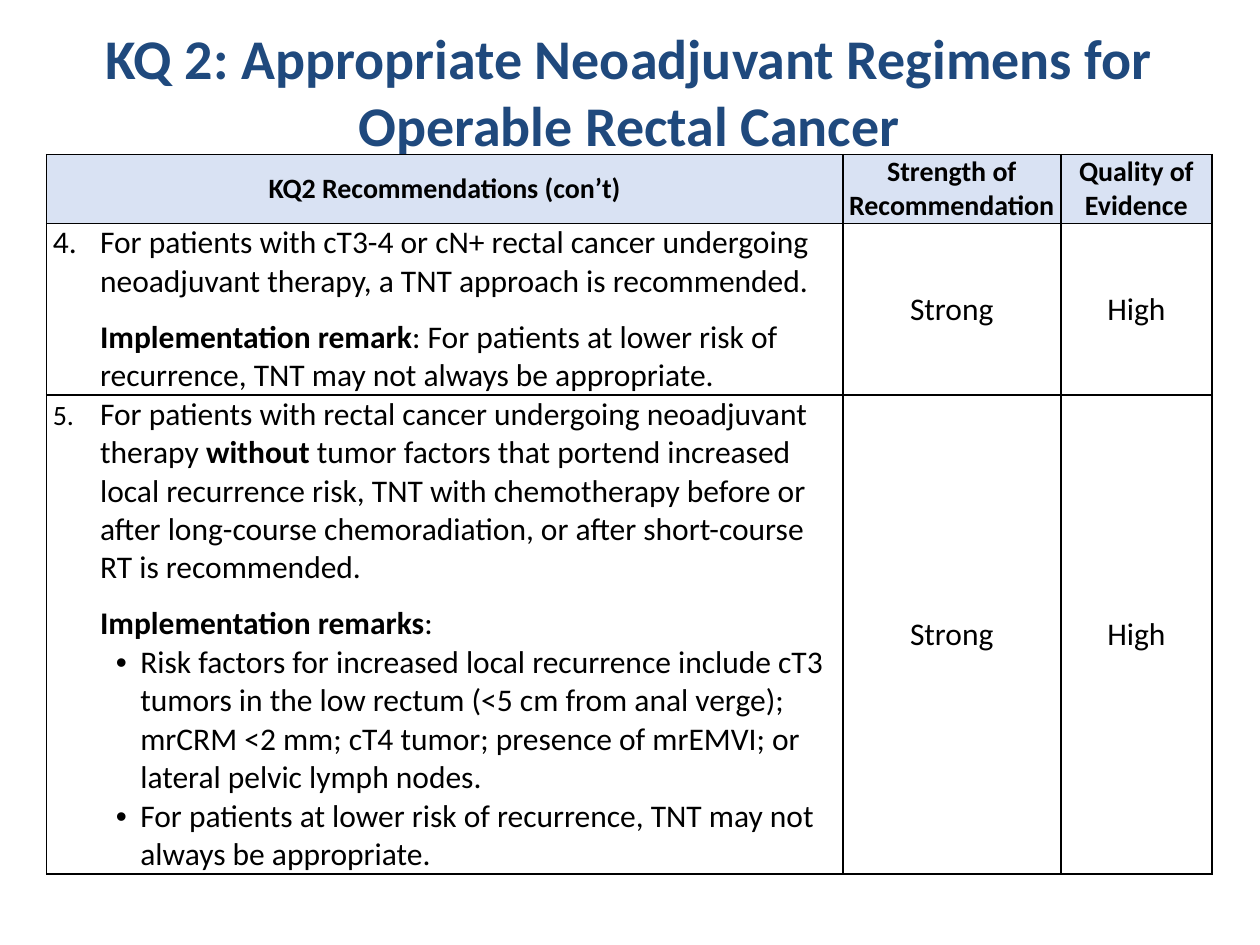
from lxml.etree import SubElement
from pptx import Presentation
from pptx.dml.color import RGBColor
from pptx.enum.text import MSO_ANCHOR, PP_ALIGN
from pptx.oxml.ns import qn
from pptx.util import Pt

COLORS = {"title": "1F497D", "text": "000000", "header": "D9E2F3", "border": "000000"}
LEFT, WIDTH = 26.6, 666
COL_WIDTHS = [455, 124.6, 86.4]
ROW_HEIGHTS = [39.4, 98, 273.6]


class Deck:
    font = "Calibri"

    def __init__(self):
        self.prs = Presentation()
        self.prs.slide_width, self.prs.slide_height = Pt(720), Pt(540)
        self.s = self.prs.slides.add_slide(self.prs.slide_layouts[5])

    def run(self, p, text, size, bold=False, color="text"):
        r = p.add_run()
        r.text = text
        r.font.name, r.font.size, r.font.bold = self.font, Pt(size), bold
        r.font.color.rgb = RGBColor.from_string(COLORS[color])

    def title(self, text, top, height):
        sp = self.s.shapes.title
        sp.left, sp.top, sp.width, sp.height = Pt(LEFT), Pt(top), Pt(WIDTH), Pt(height)
        tf = sp.text_frame
        tf.word_wrap, tf.vertical_anchor = True, MSO_ANCHOR.MIDDLE
        p = tf.paragraphs[0]
        p.alignment = PP_ALIGN.CENTER
        self.run(p, text, 32, True, "title")

    def table(self, top):
        shape = self.s.shapes.add_table(len(ROW_HEIGHTS), len(COL_WIDTHS), Pt(LEFT),
                                        Pt(top), Pt(WIDTH), Pt(sum(ROW_HEIGHTS)))
        table = shape.table
        table.first_row = table.horz_banding = False
        for col, width in zip(table.columns, COL_WIDTHS):
            col.width = Pt(width)
        for row, height in zip(table.rows, ROW_HEIGHTS):
            row.height = Pt(height)
        return table

    def cell(self, cell, header=False):
        cell.margin_left = cell.margin_right = Pt(3.6)
        cell.margin_top = cell.margin_bottom = 0
        tcPr = cell._tc.get_or_add_tcPr()
        for side in ("a:lnL", "a:lnR", "a:lnT", "a:lnB"):
            ln = SubElement(tcPr, qn(side), w=str(Pt(1)))
            SubElement(SubElement(ln, qn("a:solidFill")), qn("a:srgbClr"), val=COLORS["border"])
        if header:
            cell.fill.solid()
            cell.fill.fore_color.rgb = RGBColor.from_string(COLORS["header"])
        else:
            cell.fill.background()

    def label(self, cell, text, header=False):
        self.cell(cell, header)
        cell.vertical_anchor = MSO_ANCHOR.MIDDLE
        p = cell.text_frame.paragraphs[0]
        p.alignment = PP_ALIGN.CENTER
        self.run(p, text, 16 if header else 18, header)

    def recommendation(self, cell, paragraphs):
        self.cell(cell)
        tf = cell.text_frame
        for i, (kind, runs) in enumerate(paragraphs):
            p = tf.add_paragraph() if i else tf.paragraphs[0]
            pPr = p._p.get_or_add_pPr()
            margin, hang = (50, 14) if kind == "bullet" else (27, 0 if kind == "remark" else 27)
            pPr.set("marL", str(Pt(margin)))
            pPr.set("indent", str(-Pt(hang)))
            if kind == "remark":
                p.space_before = Pt(10)
                SubElement(pPr, qn("a:buNone"))
            elif kind == "bullet":
                SubElement(pPr, qn("a:buFont"), typeface="Arial")
                SubElement(pPr, qn("a:buChar"), char="•")
            else:
                number, percent = kind
                SubElement(pPr, qn("a:buSzPct"), val=str(percent * 1000))
                SubElement(pPr, qn("a:buFont"), typeface=self.font)
                SubElement(pPr, qn("a:buAutoNum"), type="arabicPeriod", startAt=str(number))
            for text, bold in runs:
                self.run(p, text, 18, bold)


HEADERS = ["KQ2 Recommendations (con’t)", "Strength of Recommendation", "Quality of Evidence"]
# Each row: recommendation paragraphs (kind or (number, number size %), runs), strength, quality
ROWS = [
    ([((4, 100), [("For patients with cT3-4 or cN+ rectal cancer undergoing neoadjuvant "
                   "therapy, a TNT approach is recommended.", False)]),
      ("remark", [("Implementation remark", True),
                  (": For patients at lower risk of recurrence, TNT may not always be "
                   "appropriate.", False)])],
     "Strong", "High"),
    ([((5, 89), [("For patients with rectal cancer undergoing neoadjuvant therapy ", False),
                 ("without", True),
                 (" tumor factors that portend increased local recurrence risk, TNT with "
                  "chemotherapy before or after long-course chemoradiation, or after "
                  "short-course RT is recommended.", False)]),
      ("remark", [("Implementation remarks", True), (":", False)]),
      ("bullet", [("Risk factors for increased local recurrence include cT3 tumors in the low "
                   "rectum (<5 cm from anal verge); mrCRM <2 mm; cT4 tumor; presence of "
                   "mrEMVI; or lateral pelvic lymph nodes.", False)]),
      ("bullet", [("For patients at lower risk of recurrence, TNT may not always be "
                   "appropriate.", False)])],
     "Strong", "High"),
]


def main():
    deck = Deck()
    # Title
    deck.title("KQ 2: Appropriate Neoadjuvant Regimens for Operable Rectal Cancer", 9.4, 85)
    # Table header
    table = deck.table(88.4)
    for c, text in enumerate(HEADERS):
        deck.label(table.cell(0, c), text, header=True)
    # Table body
    for r, (paragraphs, *ratings) in enumerate(ROWS, 1):
        deck.recommendation(table.cell(r, 0), paragraphs)
        for c, text in enumerate(ratings, 1):
            deck.label(table.cell(r, c), text)
    deck.prs.save("out.pptx")


if __name__ == "__main__":
    main()
